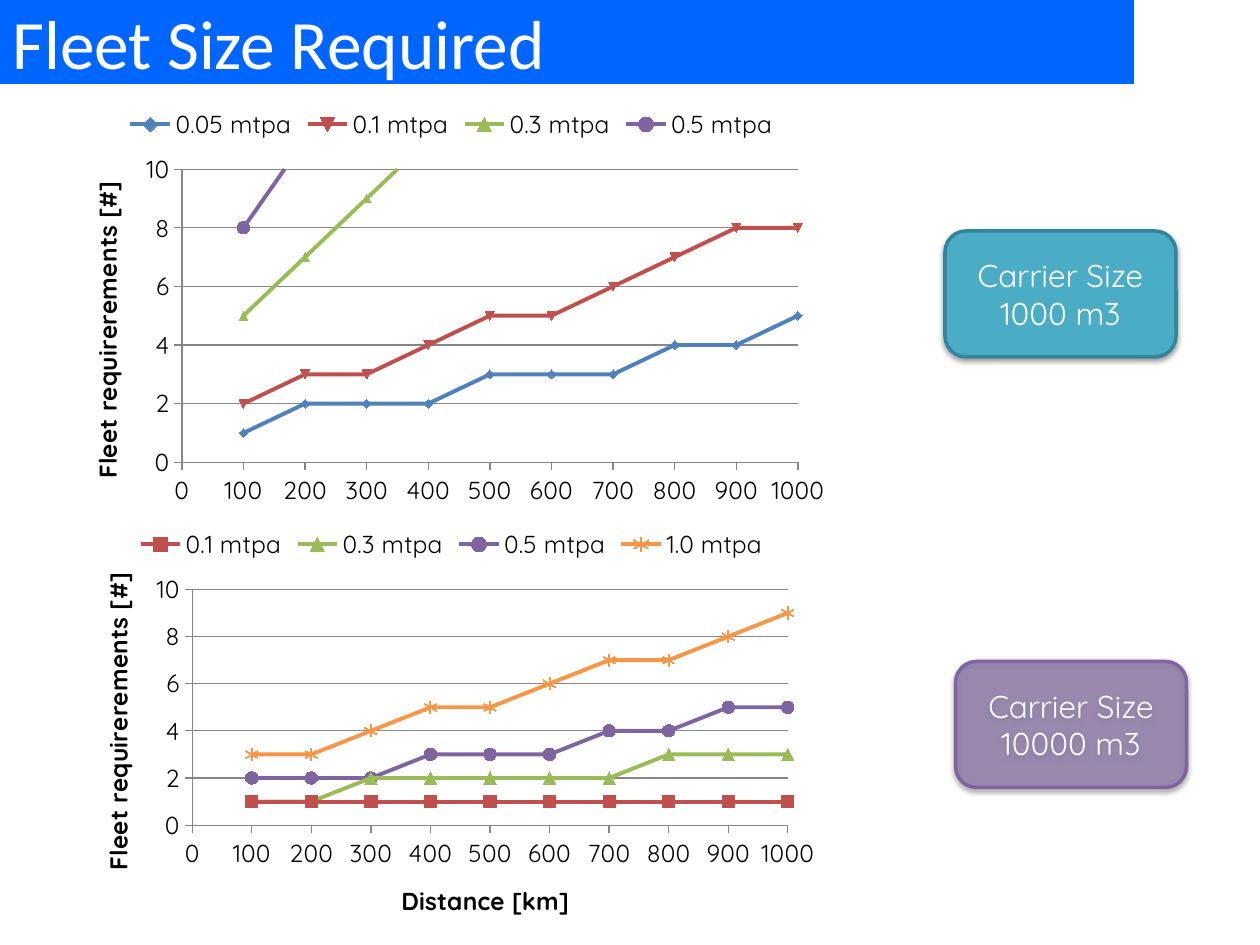
from dataclasses import dataclass
from typing import NamedTuple, Optional

from lxml.etree import SubElement
from pptx import Presentation
from pptx.chart.data import XyChartData
from pptx.dml.color import RGBColor
from pptx.enum.chart import XL_CHART_TYPE, XL_LEGEND_POSITION, XL_MARKER_STYLE, XL_TICK_MARK
from pptx.enum.shapes import MSO_SHAPE
from pptx.enum.text import MSO_ANCHOR, PP_ALIGN
from pptx.oxml import parse_xml
from pptx.oxml.ns import nsdecls, qn
from pptx.util import Emu, Inches, Pt

CELL = Inches(1) // 12  # the slide is a grid of 120 columns and 90 rows
DISTANCES = range(100, 1001, 100)


@dataclass(frozen=True)
class Theme:
    title_font: str = "Calibri"
    body_font: str = "Quicksand"
    title_size: float = 39.6
    box_size: float = 18
    chart_size: float = 14
    banner: str = "0066FF"
    white: str = "FFFFFF"
    black: str = "000000"
    axis: str = "868686"
    blue: str = "4F81BD"
    red: str = "C0504D"
    green: str = "9BBB59"
    purple: str = "8064A2"
    orange: str = "F79646"
    aqua: str = "4BACC6"
    dark_aqua: str = "31859C"


THEME = Theme()


class Area(NamedTuple):
    column: int
    row: int
    columns: int
    rows: int

    def lengths(self) -> list[Emu]:
        return [Emu(cells * CELL) for cells in self]


class Plot(NamedTuple):
    """Inner plot area, as shares of its chart."""
    x: float
    y: float
    w: float
    h: float


class Fleet(NamedTuple):
    name: str
    color: str
    sizes: list[int]
    marker: Optional[XL_MARKER_STYLE] = None


class FleetChart(NamedTuple):
    area: Area
    plot: Plot
    fleets: list[Fleet]
    distance_title: Optional[str] = None


class CarrierBox(NamedTuple):
    area: Area
    lines: list[str]
    fill: str
    border: str
    opacity: int = 100


SMALL_CARRIER_CHART = FleetChart(
    Area(6, 9, 74, 40), Plot(0.153, 0.178, 0.793, 0.698),
    [
        Fleet("0.05 mtpa", THEME.blue, [1, 2, 2, 2, 3, 3, 3, 4, 4, 5]),
        Fleet("0.1 mtpa", THEME.red, [2, 3, 3, 4, 5, 5, 6, 7, 8, 8]),
        Fleet("0.3 mtpa", THEME.green, [5, 7, 9, 11, 13, 15, 17, 19, 21, 23]),
        Fleet("0.5 mtpa", THEME.purple, [8, 11, 15, 18, 21, 25, 28, 31, 35, 38],
              XL_MARKER_STYLE.CIRCLE),
    ],
)
LARGE_CARRIER_CHART = FleetChart(
    Area(7, 49, 72, 41), Plot(0.157, 0.174, 0.788, 0.548),
    [
        Fleet("0.1 mtpa", THEME.red, [1] * 10, XL_MARKER_STYLE.SQUARE),
        Fleet("0.3 mtpa", THEME.green, [1, 1, 2, 2, 2, 2, 2, 3, 3, 3], XL_MARKER_STYLE.TRIANGLE),
        Fleet("0.5 mtpa", THEME.purple, [2, 2, 2, 3, 3, 3, 4, 4, 5, 5], XL_MARKER_STYLE.CIRCLE),
        Fleet("1.0 mtpa", THEME.orange, [3, 3, 4, 5, 5, 6, 7, 7, 8, 9], XL_MARKER_STYLE.STAR),
    ],
    "Distance [km]",
)
SMALL_CARRIER_BOX = CarrierBox(Area(90, 22, 22, 12), ["Carrier Size", "1000 m3"],
                               THEME.aqua, THEME.dark_aqua)
LARGE_CARRIER_BOX = CarrierBox(Area(91, 63, 22, 12), ["Carrier Size", "10000 m3"],
                               THEME.purple, THEME.purple, 61)


def rgb(color: str) -> RGBColor:
    return RGBColor.from_string(color)


def set_font(font, name: str, size: float, color: str, bold: bool = False) -> None:
    font.name, font.size, font.bold = name, Pt(size), bold
    font.color.rgb = rgb(color)


def add_panel(page, kind: MSO_SHAPE, area: Area, fill: str):
    panel = page.shapes.add_shape(kind, *area.lengths())
    panel.shadow.inherit = False
    panel.fill.solid()
    panel.fill.fore_color.rgb = rgb(fill)
    panel.line.fill.background()
    panel.text_frame.word_wrap = True
    panel.text_frame.vertical_anchor = MSO_ANCHOR.MIDDLE
    return panel


def add_banner(page, text: str) -> None:
    banner = add_panel(page, MSO_SHAPE.RECTANGLE, Area(0, 0, 108, 8), THEME.banner)
    para = banner.text_frame.paragraphs[0]
    para.text, para.alignment = text, PP_ALIGN.LEFT
    set_font(para.font, THEME.title_font, THEME.title_size, THEME.white)


def add_carrier_box(page, carrier: CarrierBox) -> None:
    box = add_panel(page, MSO_SHAPE.ROUNDED_RECTANGLE, carrier.area, carrier.fill)
    box.line.color.rgb, box.line.width = rgb(carrier.border), Pt(2)
    box.text_frame.text = "\n".join(carrier.lines)
    for para in box.text_frame.paragraphs:
        para.alignment = PP_ALIGN.CENTER
        set_font(para.font, THEME.body_font, THEME.box_size, THEME.white)
    properties = box._element.spPr
    if carrier.opacity < 100:
        color = properties.find(qn("a:solidFill")).find(qn("a:srgbClr"))
        SubElement(color, qn("a:alpha"), val=str(carrier.opacity * 1000))
    shadow = SubElement(properties.find(qn("a:effectLst")), qn("a:outerShdw"), blurRad="40000",
                        dist="20000", dir="5400000", rotWithShape="0")
    shadow_color = SubElement(shadow, qn("a:srgbClr"), val=THEME.black)
    SubElement(shadow_color, qn("a:alpha"), val="38000")


def format_axis(axis, maximum: int, step: int, title: Optional[str], grid: bool) -> None:
    axis.minimum_scale, axis.maximum_scale, axis.major_unit = 0, maximum, step
    axis.major_tick_mark, axis.minor_tick_mark = XL_TICK_MARK.OUTSIDE, XL_TICK_MARK.NONE
    axis.has_major_gridlines = grid
    lines = [axis.format.line] + ([axis.major_gridlines.format.line] if grid else [])
    for line in lines:
        line.color.rgb, line.width = rgb(THEME.axis), Pt(0.75)
    axis.tick_labels.number_format = "General"
    axis.tick_labels.number_format_is_linked = False
    axis.has_title = title is not None
    if title:
        para = axis.axis_title.text_frame.paragraphs[0]
        para.text = title
        set_font(para.font, THEME.body_font, THEME.chart_size, THEME.black, bold=True)


def place_plot(chart, plot: Plot) -> None:
    """Fix the inner plot area, which python-pptx leaves automatic."""
    plot_area = chart._chartSpace.chart.plotArea
    for layout in plot_area.findall(qn("c:layout")):
        plot_area.remove(layout)
    shares = "".join(f'<c:{key} val="{share}"/>' for key, share in plot._asdict().items())
    plot_area.insert(0, parse_xml(
        f'<c:layout {nsdecls("c")}><c:manualLayout><c:layoutTarget val="inner"/>'
        f'<c:xMode val="edge"/><c:yMode val="edge"/>{shares}</c:manualLayout></c:layout>'))


def add_fleet_chart(page, content: FleetChart) -> None:
    data = XyChartData()
    for fleet in content.fleets:
        points = data.add_series(fleet.name)
        for distance, size in zip(DISTANCES, fleet.sizes):
            points.add_data_point(distance, size)
    chart = page.shapes.add_chart(XL_CHART_TYPE.XY_SCATTER_LINES, *content.area.lengths(), data).chart
    set_font(chart.font, THEME.body_font, THEME.chart_size, THEME.black)
    chart.has_title = False
    chart.has_legend = True
    chart.legend.position = XL_LEGEND_POSITION.TOP
    chart.legend.include_in_layout = False
    chart.plots[0].vary_by_categories = False
    format_axis(chart.category_axis, 1000, 100, content.distance_title, grid=False)
    format_axis(chart.value_axis, 10, 2, "Fleet requirerements [#]", grid=True)
    for series, fleet in zip(chart.plots[0].series, content.fleets):
        series.smooth = False
        series.format.line.color.rgb, series.format.line.width = rgb(fleet.color), Pt(2.25)
        if fleet.marker is not None:
            series.marker.style, series.marker.size = fleet.marker, 7
            series.marker.format.fill.solid()
            series.marker.format.fill.fore_color.rgb = rgb(fleet.color)
            series.marker.format.line.color.rgb = rgb(fleet.color)
    place_plot(chart, content.plot)


def main() -> None:
    deck = Presentation()
    deck.slide_width, deck.slide_height = Inches(10), Inches(7.5)
    page = deck.slides.add_slide(deck.slide_layouts[6])
    add_banner(page, "Fleet Size Required")
    add_carrier_box(page, SMALL_CARRIER_BOX)
    add_fleet_chart(page, LARGE_CARRIER_CHART)
    add_carrier_box(page, LARGE_CARRIER_BOX)
    add_fleet_chart(page, SMALL_CARRIER_CHART)
    deck.save("out.pptx")


if __name__ == "__main__":
    main()
